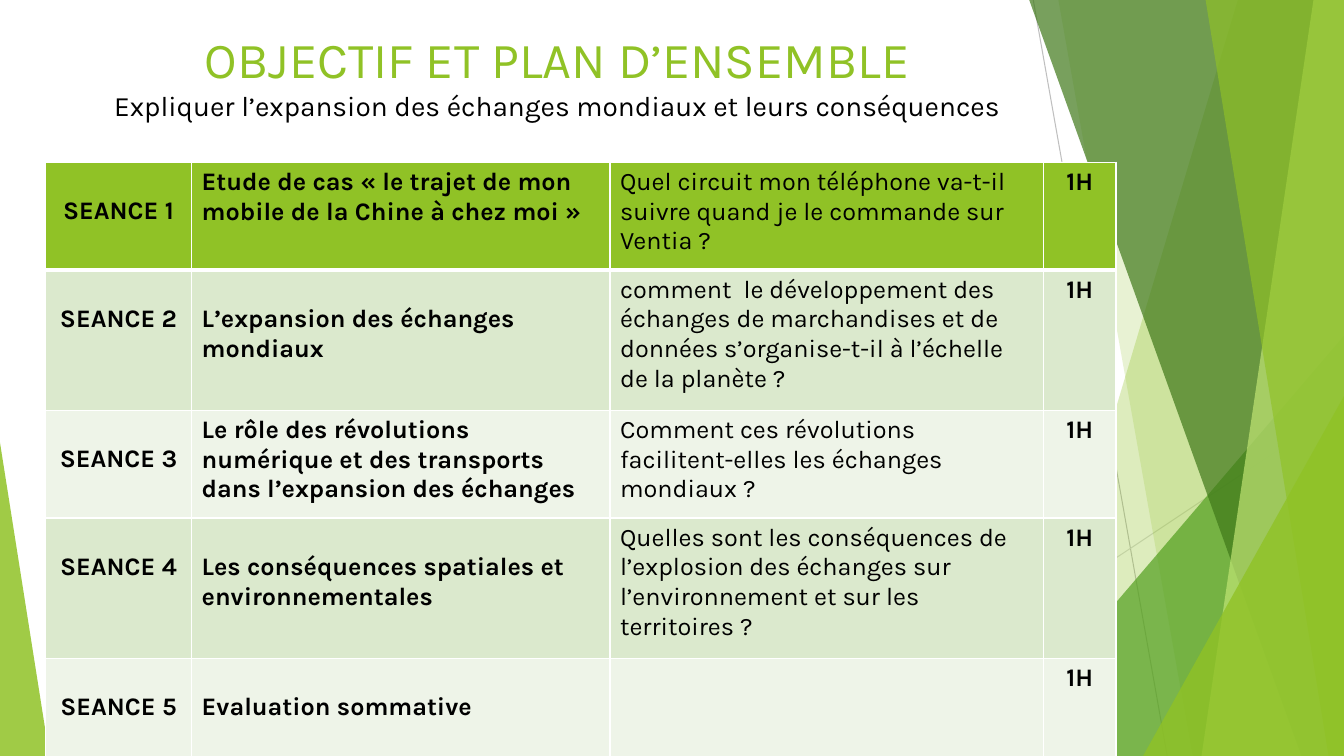
from dataclasses import dataclass

from lxml.etree import SubElement
from pptx import Presentation
from pptx.dml.color import RGBColor
from pptx.enum.shapes import MSO_CONNECTOR, MSO_SHAPE
from pptx.enum.text import MSO_ANCHOR, PP_ALIGN
from pptx.oxml.ns import qn
from pptx.util import Inches, Pt

SLIDE_WIDTH, SLIDE_HEIGHT = Inches(13.33), Inches(7.5)


@dataclass(frozen=True)
class Theme:
    font: str = "Karla"
    title_size: int = 36
    objective_size: int = 20
    table_size: int = 18
    text: str = "000000"
    border: str = "FFFFFF"
    lime: str = "90C226"
    pale_lime: str = "C0E474"
    leaf: str = "54A021"
    forest: str = "3F7819"
    row_dark: str = "DBE9CD"
    row_light: str = "EEF4E8"
    rays: tuple = ("BFBFBF", "D9D9D9")


THEME = Theme()
BLANK_LINE = 0.29  # height in inches of one line of table text

# Shares of the slide's width and height, in percent
COLUMN_SHARES = (10.88, 31.13, 32.25, 5.4)
ROW_SHARES = (14.27, 18.53, 14.27, 18.53, 13.2)

# Session topic, lines it is lowered by, guiding question
SESSIONS = (
    ("Etude de cas « le trajet de mon mobile de la Chine à chez moi »", 0,
     "Quel circuit mon téléphone va-t-il suivre quand je le commande sur Ventia ?"),
    ("L’expansion des échanges mondiaux", 1,
     "comment  le développement des échanges de marchandises et de données "
     "s’organise-t-il à l’échelle de la planète ?"),
    ("Le rôle des révolutions numérique et des transports dans l’expansion des échanges", 0,
     "Comment ces révolutions facilitent-elles les échanges mondiaux ?"),
    ("Les conséquences spatiales et environnementales", 1,
     "Quelles sont les conséquences de l’explosion des échanges sur "
     "l’environnement et sur les territoires ?"),
    ("Evaluation sommative", 1, ""),
)
DURATION = "1H"


def across(percent):
    return round(SLIDE_WIDTH * percent / 100)


def down(percent):
    return round(SLIDE_HEIGHT * percent / 100)


def paint(shape, color, opacity):
    shape.shadow.inherit = False
    shape.line.fill.background()
    shape.fill.solid()
    shape.fill.fore_color.rgb = RGBColor.from_string(color)
    tint = shape.fill._xPr.find(qn("a:solidFill"))[0]
    SubElement(tint, qn("a:alpha")).set("val", str(opacity * 1000))


def add_ray(slide, start, end, color):
    ray = slide.shapes.add_connector(
        MSO_CONNECTOR.STRAIGHT,
        across(start[0]), down(start[1]), across(end[0]), down(end[1]))
    ray.line.color.rgb = RGBColor.from_string(color)
    ray.line.width = Pt(0.75)
    SubElement(ray._element.spPr, qn("a:effectLst"))


def add_band(slide, top_left, bottom_left, color, opacity):
    """Band from a slanted left side to the slide's right edge."""
    outline = slide.shapes.build_freeform(across(top_left), 0)
    outline.add_line_segments([
        (SLIDE_WIDTH, 0), (SLIDE_WIDTH, SLIDE_HEIGHT),
        (across(bottom_left), SLIDE_HEIGHT)], close=True)
    paint(outline.convert_to_shape(), color, opacity)


def add_corner(slide, left, right, top, apex, color, opacity):
    """Triangle that stands on the slide's bottom edge."""
    corner = slide.shapes.add_shape(
        MSO_SHAPE.ISOSCELES_TRIANGLE, across(left), down(top),
        across(right - left), down(100 - top))
    corner.adjustments[0] = apex
    paint(corner, color, opacity)


def write(paragraph, text, size, color=THEME.text, bold=False, align=PP_ALIGN.CENTER):
    paragraph.text = text
    paragraph.alignment = align
    font = paragraph.font
    font.name, font.size, font.bold = THEME.font, Pt(size), bold
    font.color.rgb = RGBColor.from_string(color)


def add_heading(slide):
    heading = slide.shapes.add_textbox(
        across(6.23), down(3.07), across(70.5), down(17.2)).text_frame
    heading.word_wrap = True
    heading.vertical_anchor = MSO_ANCHOR.TOP
    write(heading.paragraphs[0], "OBJECTIF ET PLAN D’ENSEMBLE",
          THEME.title_size, THEME.lime)
    write(heading.add_paragraph(),
          "Expliquer l’expansion des échanges mondiaux et leurs conséquences",
          THEME.objective_size)


def set_borders(cell, bottom_width):
    properties = cell._tc.get_or_add_tcPr()
    widths = {"a:lnL": 1, "a:lnR": 1, "a:lnT": 1, "a:lnB": bottom_width}
    for position, (side, width) in enumerate(widths.items()):
        border = SubElement(properties, qn(side), w=str(Pt(width)))
        fill = SubElement(border, qn("a:solidFill"))
        SubElement(fill, qn("a:srgbClr"), val=THEME.border)
        properties.insert(position, border)


def fill_cell(cell, text, color, bold, align, lowered=0, bottom_width=1):
    cell.fill.solid()
    cell.fill.fore_color.rgb = RGBColor.from_string(color)
    cell.margin_top = Inches(0.05 + lowered * BLANK_LINE)
    write(cell.text_frame.paragraphs[0], text, THEME.table_size, bold=bold, align=align)
    set_borders(cell, bottom_width)


def add_plan(slide):
    plan = slide.shapes.add_table(
        len(SESSIONS), len(COLUMN_SHARES), across(3.38), down(21.47),
        across(sum(COLUMN_SHARES)), down(sum(ROW_SHARES))).table
    plan.first_row = plan.horz_banding = False
    for column, share in zip(plan.columns, COLUMN_SHARES):
        column.width = across(share)
    for row, share in zip(plan.rows, ROW_SHARES):
        row.height = down(share)
    for index, (topic, lowered, question) in enumerate(SESSIONS):
        first = index == 0
        color = THEME.lime if first else (THEME.row_light, THEME.row_dark)[index % 2]
        entries = (
            (f"SEANCE {index + 1}", True, PP_ALIGN.CENTER, 1),
            (topic, True, PP_ALIGN.LEFT, lowered),
            (question, False, PP_ALIGN.LEFT, 0),
            (DURATION, True, PP_ALIGN.CENTER, 0),
        )
        for column, (text, bold, align, drop) in enumerate(entries):
            fill_cell(plan.cell(index, column), text, color, bold, align, drop,
                      bottom_width=3 if first else 1)


def add_facets(slide):
    # Thin rays behind the facets
    add_ray(slide, (76.88, 0), (86.85, 100), THEME.rays[0])
    add_ray(slide, (100, 53.73), (60.9, 100), THEME.rays[1])
    # Overlapping green facets, from back to front
    add_band(slide, 92.1, 75.3, THEME.lime, 30)
    add_band(slide, 78.75, 88.73, THEME.lime, 20)
    add_corner(slide, 73.28, 100, 44.4, 1, THEME.leaf, 72)
    add_band(slide, 76.58, 96.83, THEME.forest, 70)
    add_band(slide, 97.73, 89.4, THEME.pale_lime, 70)
    add_band(slide, 89.7, 98.85, THEME.lime, 65)
    add_corner(slide, 85.05, 100, 52.4, 1, THEME.lime, 80)
    add_corner(slide, 0, 3.68, 58.53, 0, THEME.lime, 85)


def main():
    presentation = Presentation()
    presentation.slide_width, presentation.slide_height = SLIDE_WIDTH, SLIDE_HEIGHT
    slide = presentation.slides.add_slide(presentation.slide_layouts[6])
    add_facets(slide)
    add_heading(slide)
    add_plan(slide)
    presentation.save("out.pptx")


if __name__ == "__main__":
    main()
